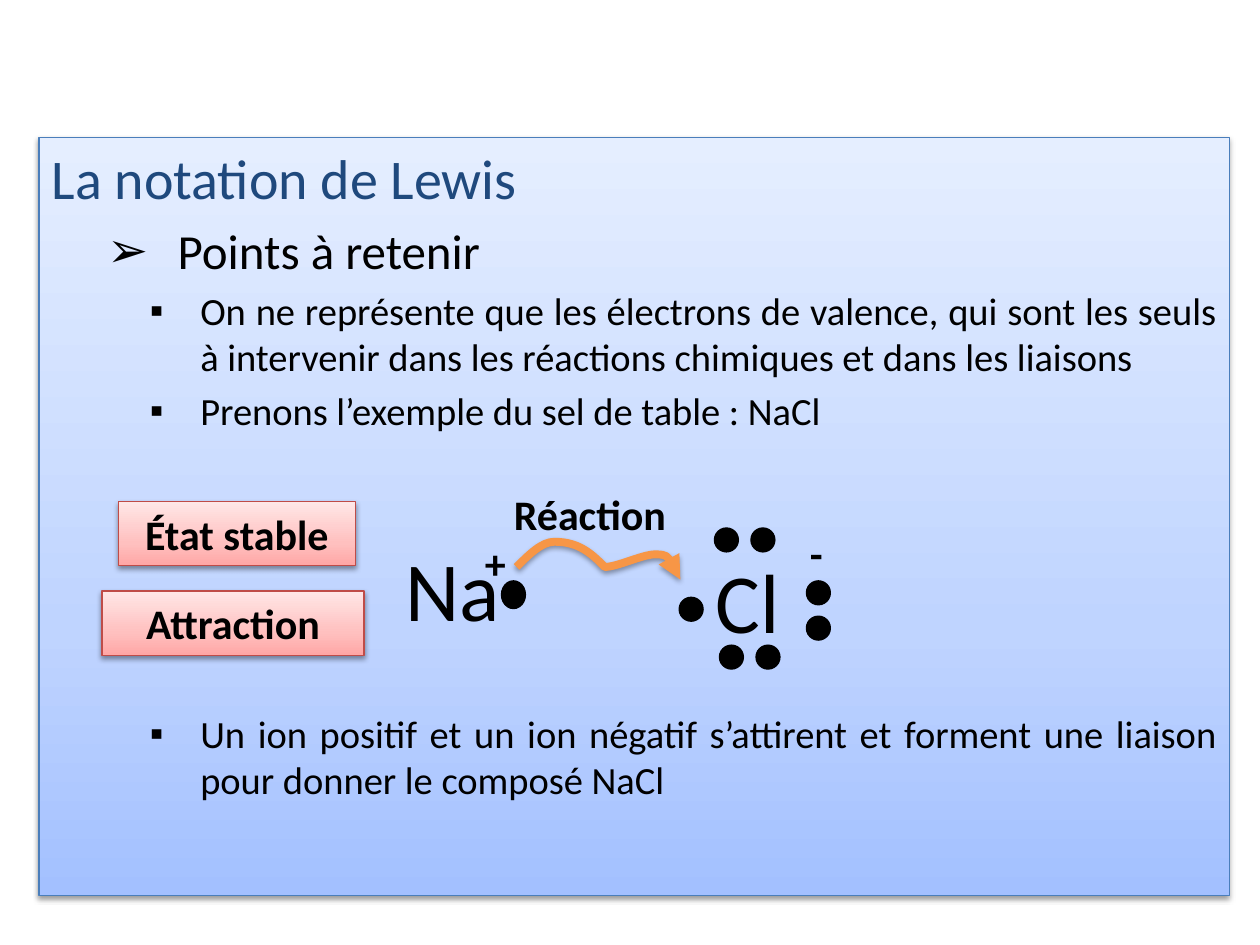
from copy import deepcopy
from dataclasses import dataclass
from typing import NamedTuple

from lxml import etree
from pptx import Presentation
from pptx.dml.color import RGBColor
from pptx.enum.shapes import MSO_SHAPE
from pptx.enum.text import MSO_ANCHOR, MSO_AUTO_SIZE, PP_ALIGN
from pptx.oxml.ns import qn
from pptx.util import Emu, Inches, Pt

RECTANGLE, OVAL = MSO_SHAPE.RECTANGLE, MSO_SHAPE.OVAL
LEFT, CENTER, JUSTIFY = PP_ALIGN.LEFT, PP_ALIGN.CENTER, PP_ALIGN.JUSTIFY

SLIDE_WIDTH, SLIDE_HEIGHT = Inches(10), Inches(7.5)
UNIT = SLIDE_WIDTH / 100  # square grid of 100 columns by 75 rows


@dataclass(frozen=True)
class Theme:
    font: str = "Calibri"
    ink: str = "000000"
    heading: str = "1F497D"
    reaction: str = "F79646"
    panel_line: str = "4A7EBB"
    panel_stops: tuple = ("A3C0FF", "BFD4FF", "E5EEFF")
    state_line: str = "BF4C48"
    state_stops: tuple = ("FFA6A5", "FFC0BF", "FFE7E7")
    stop_positions: tuple = (0, 0.35, 1)
    heading_size: float = 32
    topic_size: float = 28
    point_size: float = 22
    symbol_size: float = 48
    label_size: float = 24
    thin: float = 0.75
    thick: float = 4.5


THEME = Theme()


class Box(NamedTuple):
    col: float
    row: float
    cols: float
    rows: float


class Label(NamedTuple):
    text: str
    box: Box
    size: float = THEME.label_size
    bold: bool = True


class Point(NamedTuple):
    text: str
    size: float
    color: str = THEME.ink
    level: int = 0
    bullet: str = ""
    margin: float = 0
    hanging: float = 0
    before: float = 0
    align: PP_ALIGN = JUSTIFY


class Electrons(NamedTuple):
    """A run of equal dots, each one step from the previous."""
    col: float
    row: float
    count: int = 1
    step_cols: float = 0
    step_rows: float = 0
    height: float = 1.9


def valence_point(text: str, before: float = 4.4) -> Point:
    return Point(text, THEME.point_size, level=2, bullet="▪",
                 margin=11.8, hanging=4, before=before)


PANEL = Box(3.1, 10.9, 94.5, 60.2)
DIAGRAM_GAP = 158  # points kept free for the Lewis diagram
POINTS = [
    Point("La notation de Lewis", THEME.heading_size, THEME.heading, align=LEFT),
    Point("Points à retenir", THEME.topic_size, level=1, bullet="➢",
          margin=10, hanging=5.6, before=5.6),
    valence_point("On ne représente que les électrons de valence, qui sont les seuls "
                  "à intervenir dans les réactions chimiques et dans les liaisons"),
    valence_point("Prenons l’exemple du sel de table : NaCl"),
    valence_point("Un ion positif et un ion négatif s’attirent et forment une liaison "
                  "pour donner le composé NaCl", DIAGRAM_GAP),
]
STATES = [
    Label("État stable", Box(9.4, 39.8, 18.8, 5.1)),
    Label("Attraction", Box(8.1, 46.9, 20.8, 5.1)),
]
SYMBOLS = [
    Label("Na", Box(31.2, 42.2, 12.1, 9.1), THEME.symbol_size, False),
    Label("Cl", Box(55.8, 43.1, 9.8, 9.4), THEME.symbol_size, False),
    Label("+", Box(37.5, 42.2, 4.7, 5.1)),
    Label("-", Box(63.3, 41.4, 4.7, 5.1)),
    Label("Réaction", Box(39.8, 38.3, 14.8, 5.1)),
]
ELECTRONS = [
    Electrons(39.8, 46.1, height=2.2),
    Electrons(53.9, 47.4),
    Electrons(64, 46.1, 2, step_rows=2.8),
    Electrons(56.7, 41.9, 2, step_cols=2.9),
    Electrons(57.1, 51.2, 2, step_cols=2.9),
]
# Start, then two control points and an end for each curve
REACTION_CURVE = [
    (40.9, 44.7),
    (42.1, 43.7), (43.2, 42.6), (44.4, 42.6),
    (45.6, 42.6), (46.7, 44.5), (47.9, 44.7),
    (49.2, 45), (50.8, 44), (51.8, 44.1),
    (52.7, 44.3), (53.5, 45.4), (53.8, 45.6),
]


def grid(units: float) -> Emu:
    return Emu(round(units * UNIT))


def rgb(color: str) -> RGBColor:
    return RGBColor.from_string(color)


def add_child(parent, tag: str, **attributes):
    return etree.SubElement(parent, qn(tag), attributes)


def set_line(shape, color: str, width: float = THEME.thin) -> None:
    shape.line.color.rgb = rgb(color)
    shape.line.width = Pt(width)


def cast_shadow(shape, opacity: int) -> None:
    shape.shadow.inherit = False
    effects = shape._element.spPr.find(qn("a:effectLst"))
    shadow = add_child(effects, "a:outerShdw", blurRad=str(Pt(3.1)), dist=str(Pt(1.7)),
                       dir="5400000", rotWithShape="0")
    color = add_child(shadow, "a:srgbClr", val=THEME.ink)
    add_child(color, "a:alpha", val=str(opacity * 1000))


def set_gradient(shape, colors: tuple) -> None:
    shape.fill.gradient()
    shape.fill.gradient_angle = 90
    stops = shape._element.spPr.find(qn("a:gradFill")).find(qn("a:gsLst"))
    stops.append(deepcopy(stops[0]))
    for stop, color, position in zip(shape.fill.gradient_stops, colors, THEME.stop_positions):
        stop.color.rgb = rgb(color)
        stop.position = position


def style_font(font, size: float, color: str = THEME.ink, bold: bool = False) -> None:
    font.name, font.size, font.bold = THEME.font, Pt(size), bold
    font.color.rgb = rgb(color)


def write_label(shape, label: Label, align: PP_ALIGN) -> None:
    frame = shape.text_frame
    frame.word_wrap = True
    frame.text = label.text
    frame.paragraphs[0].alignment = align
    style_font(frame.paragraphs[0].runs[0].font, label.size, bold=label.bold)


def write_point(paragraph, point: Point) -> None:
    paragraph.text = point.text
    paragraph.level = point.level
    paragraph.alignment = point.align
    paragraph.space_before = Pt(point.before)
    properties = paragraph._p.get_or_add_pPr()
    properties.set("marL", str(grid(point.margin)))
    properties.set("indent", str(-grid(point.hanging)))
    if point.bullet:
        add_child(properties, "a:buChar", char=point.bullet)
    else:
        add_child(properties, "a:buNone")
    style_font(paragraph.runs[0].font, point.size, point.color)


def fill_panel(panel) -> None:
    panel.left, panel.top, panel.width, panel.height = map(grid, PANEL)
    set_line(panel, THEME.panel_line)
    set_gradient(panel, THEME.panel_stops)
    cast_shadow(panel, 38)
    frame = panel.text_frame
    frame.auto_size = MSO_AUTO_SIZE.NONE
    frame.vertical_anchor = MSO_ANCHOR.TOP
    for index, point in enumerate(POINTS):
        write_point(frame.add_paragraph() if index else frame.paragraphs[0], point)


def draw_state(shapes, state: Label) -> None:
    plate = shapes.add_shape(RECTANGLE, *map(grid, state.box))
    set_line(plate, THEME.state_line)
    set_gradient(plate, THEME.state_stops)
    cast_shadow(plate, 38)
    write_label(plate, state, CENTER)


def draw_electrons(shapes, electrons: Electrons) -> None:
    for index in range(electrons.count):
        dot = Box(electrons.col + index * electrons.step_cols,
                  electrons.row + index * electrons.step_rows, 1.9, electrons.height)
        electron = shapes.add_shape(OVAL, *map(grid, dot))
        electron.shadow.inherit = False
        electron.fill.solid()
        electron.fill.fore_color.rgb = rgb(THEME.ink)
        set_line(electron, THEME.ink)


def draw_reaction(shapes) -> None:
    """Draw the control polygon, then turn each three sides into one curve."""
    start, *controls = REACTION_CURVE
    builder = shapes.build_freeform(*start, scale=UNIT)
    builder.add_line_segments(controls, close=False)
    arrow = builder.convert_to_shape()
    sides = list(arrow._element.iter(qn("a:lnTo")))
    for first in range(0, len(sides), 3):
        curve = add_child(sides[first].getparent(), "a:cubicBezTo")
        for side in sides[first:first + 3]:
            curve.append(side[0])
            side.getparent().remove(side)
    arrow.fill.background()
    set_line(arrow, THEME.reaction, THEME.thick)
    add_child(arrow.line._get_or_add_ln(), "a:tailEnd", type="triangle")
    cast_shadow(arrow, 35)


def main() -> None:
    deck = Presentation()
    deck.slide_width, deck.slide_height = SLIDE_WIDTH, SLIDE_HEIGHT
    slide = deck.slides.add_slide(deck.slide_layouts.get_by_name("Title and Content"))
    unused_title = slide.shapes.title._element
    unused_title.getparent().remove(unused_title)
    fill_panel(slide.placeholders[1])
    for symbol in SYMBOLS:
        write_label(slide.shapes.add_textbox(*map(grid, symbol.box)), symbol, LEFT)
    draw_reaction(slide.shapes)
    for state in STATES:
        draw_state(slide.shapes, state)
    for electrons in ELECTRONS:
        draw_electrons(slide.shapes, electrons)
    deck.save("out.pptx")


if __name__ == "__main__":
    main()
